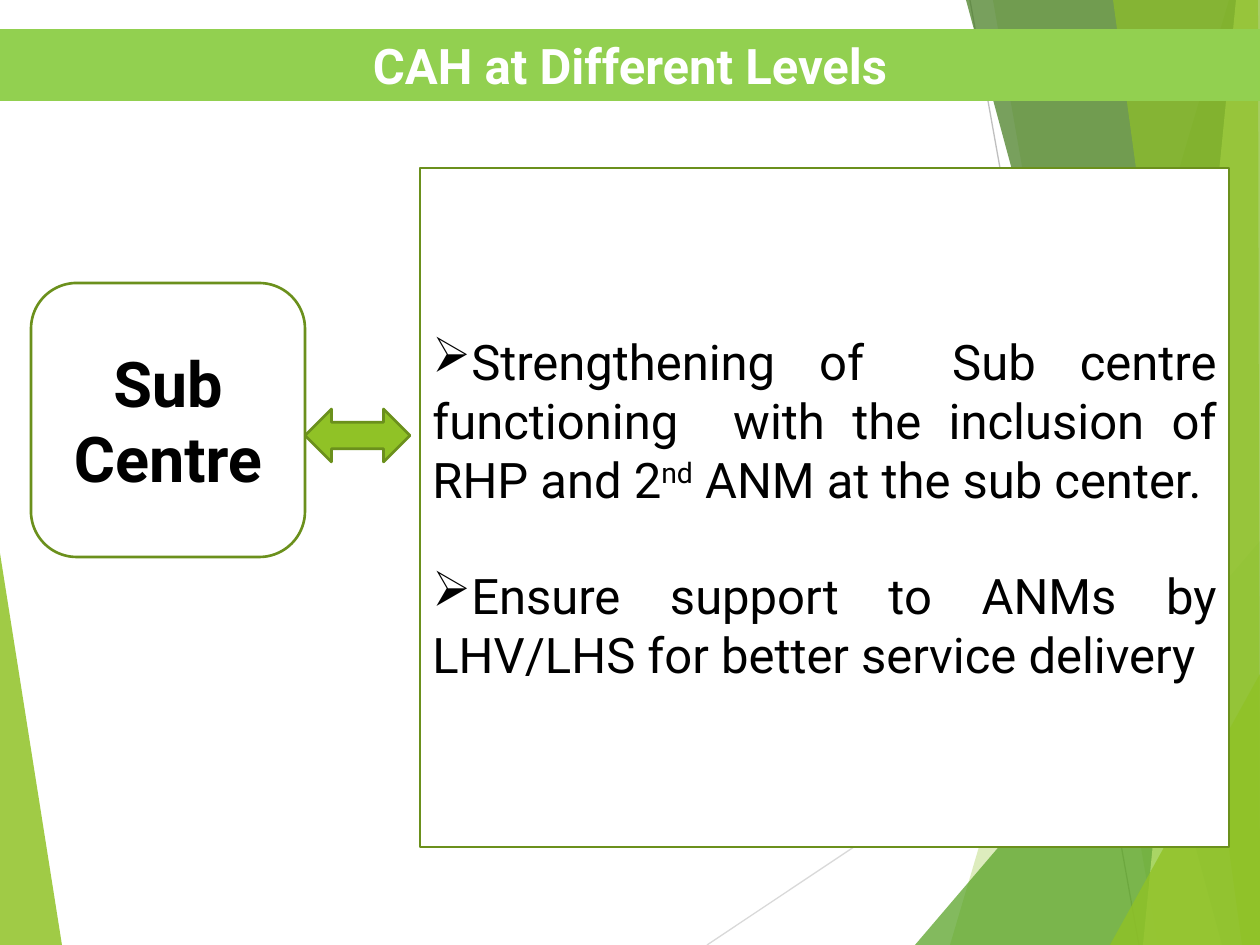
from pptx import Presentation
from pptx import util as u
from pptx.dml.color import RGBColor
from pptx.enum import shapes as sh, text as tx
from pptx.oxml.ns import qn
from lxml import etree

PX = 914400 / 126
WIDE, HIGH = 1260, 945
WHITE = RGBColor(0xFF, 0xFF, 0xFF)
BLACK = RGBColor(0, 0, 0)
LIME = RGBColor(0x90, 0xC2, 0x26)
LEAF = RGBColor(0x54, 0xA0, 0x21)
PINE = RGBColor(0x3F, 0x78, 0x19)
PALE = RGBColor(0xC0, 0xE4, 0x74)
BAND = RGBColor(0x92, 0xD0, 0x50)
EDGE = RGBColor(0x6B, 0x90, 0x1C)
MIST = RGBColor(0xD9, 0xD9, 0xD9)
GREY = RGBColor(0xBF, 0xBF, 0xBF)

deck = Presentation()
deck.slide_width, deck.slide_height = u.Inches(10), u.Inches(7.5)
slide = deck.slides.add_slide(deck.slide_layouts[6])
tree = slide.shapes


def paint(item, fill, edge=None):
    item.shadow.inherit = False
    item.fill.solid()
    item.fill.fore_color.rgb = fill
    if edge is None:
        item.line.fill.background()
    else:
        item.line.color.rgb = edge
        item.line.width = u.Pt(1.5)


def write(para, words, **form):
    run = para.add_run()
    run.text = words
    run.font.name = "Roboto"
    run.font.color.rgb = form.pop("color")
    for key, val in form.items():
        setattr(run.font, key, val)
    return run


# Thin lines behind the facets
for x1, y1, x2, y2, color in [
    (707, HIGH, WIDE, 576, MIST),
    (970, 0, 1139, HIGH, GREY),
]:
    ends = [round(v * PX) for v in (x1, y1, x2, y2)]
    line = tree.add_connector(sh.MSO_CONNECTOR.STRAIGHT, *ends)
    line.line.color.rgb = color
    line.line.width = u.Pt(0.75)
    etree.SubElement(line._element.spPr, qn("a:effectLst"))

# Translucent facets: colour, opacity in percent, corners
facets = [
    (LIME, 85, [(0, 553), (62, HIGH), (0, HIGH)]),
    (LIME, 30, [(1229, 0), (950, HIGH), (WIDE, HIGH), (WIDE, 0)]),
    (LIME, 20, [(993, 0), (1158, HIGH), (WIDE, HIGH), (WIDE, 0)]),
    (LEAF, 72, [(915, HIGH), (WIDE, 541), (WIDE, HIGH)]),
    (PINE, 70, [(966, 0), (1222, HIGH), (WIDE, HIGH), (WIDE, 0)]),
    (PALE, 70, [(1236, 0), (1143, HIGH), (WIDE, HIGH), (WIDE, 0)]),
    (LIME, 65, [(1113, 0), (1242, HIGH), (WIDE, HIGH), (1258, 0)]),
    (LIME, 80, [(1110, HIGH), (WIDE, 674), (WIDE, HIGH)]),
]
for color, part, dots in facets:
    pen = tree.build_freeform(*dots[0], scale=PX)
    pen.add_line_segments(dots[1:], close=True)
    facet = pen.convert_to_shape()
    paint(facet, color)
    tint = facet._element.spPr.find(qn("a:solidFill"))[0]
    etree.SubElement(tint, qn("a:alpha"), val=str(part * 1000))

# Boxes, arrow and title band
KIND = sh.MSO_SHAPE
items = []
for kind, spot, fill, edge in [
    (KIND.RECTANGLE, (420, 168, 809, 679), WHITE, EDGE),
    (KIND.ROUNDED_RECTANGLE, (31, 283, 274, 274), WHITE, EDGE),
    (KIND.LEFT_RIGHT_ARROW, (305, 409, 105, 53), LIME, EDGE),
    (KIND.RECTANGLE, (0, 29, WIDE, 72), BAND, None),
]:
    item = tree.add_shape(kind, *[round(v * PX) for v in spot])
    paint(item, fill, edge)
    items.append(item)
panel, centre, arrow, title = items

# Headings
for item, words, size, color, side in [
    (centre, "Sub Centre", 36, BLACK, tx.MSO_ANCHOR.MIDDLE),
    (title, "CAH at Different Levels", 28, WHITE, tx.MSO_ANCHOR.TOP),
]:
    frame = item.text_frame
    frame.word_wrap = True
    frame.vertical_anchor = side
    para = frame.paragraphs[0]
    para.alignment = tx.PP_ALIGN.CENTER
    write(para, words, size=u.Pt(size), bold=True, color=color)

# Bulleted points, each a list of (words, raised)
points = [
    [
        ("Strengthening of  Sub centre functioning  with the inclusion of RHP and 2", False),
        ("nd", True),
        (" ANM at the sub center.", False),
    ],
    [("Ensure support to ANMs by LHV/LHS for better service delivery", False)],
]
frame = panel.text_frame
frame.word_wrap = True
frame.vertical_anchor = tx.MSO_ANCHOR.MIDDLE
for n, point in enumerate(points):
    para = frame.add_paragraph() if n else frame.paragraphs[0]
    para.alignment = tx.PP_ALIGN.JUSTIFY
    if n:
        para.space_before = u.Pt(33)
    props = para._p.get_or_add_pPr()
    etree.SubElement(props, qn("a:buChar"), char="➢")
    for words, raised in point:
        run = write(para, words, size=u.Pt(28), color=BLACK)
        if raised:
            run._r.get_or_add_rPr().set("baseline", "30000")

deck.save("out.pptx")
